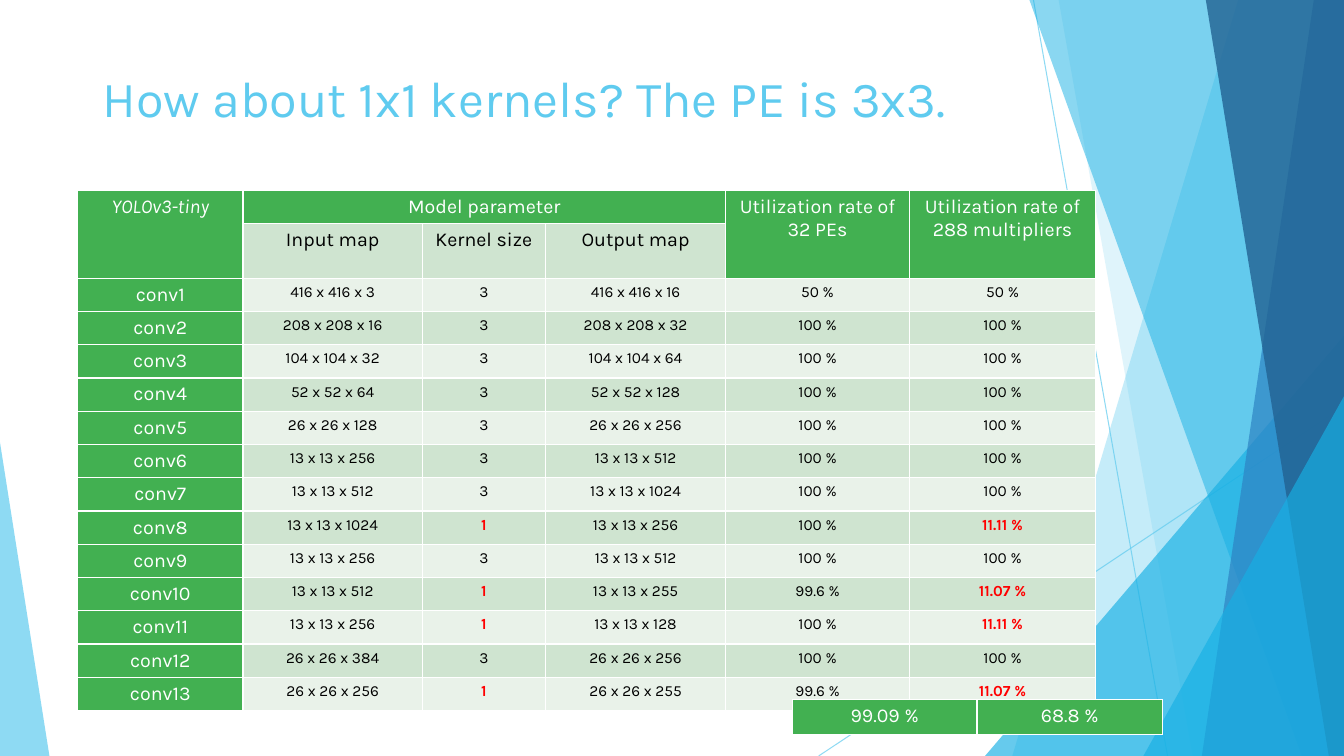
from dataclasses import dataclass

from lxml import etree
from pptx import Presentation
from pptx.dml.color import RGBColor
from pptx.enum.shapes import MSO_CONNECTOR, MSO_SHAPE
from pptx.enum.text import MSO_ANCHOR, PP_ALIGN
from pptx.oxml.ns import qn
from pptx.util import Inches, Pt

STRAIGHT = MSO_CONNECTOR.STRAIGHT
TRIANGLE = MSO_SHAPE.ISOSCELES_TRIANGLE
TOP = MSO_ANCHOR.TOP
LEFT = PP_ALIGN.LEFT
CENTER = PP_ALIGN.CENTER


@dataclass(frozen=True)
class Theme:
    font: str = "Karla"
    sky: str = "5FCBEF"
    cyan: str = "17B0E4"
    blue: str = "2E83C3"
    navy: str = "226292"
    green: str = "42B051"
    band_dark: str = "CFE4D0"
    band_light: str = "E9F2E9"
    white: str = "FFFFFF"
    black: str = "000000"
    red: str = "FF0000"
    title_size: int = 36
    label_size: int = 14
    value_size: int = 11


THEME = Theme()
SLIDE_WIDTH = 13.33
SLIDE_HEIGHT = 7.5

RAYS = [
    ((10.25, 0), (11.58, SLIDE_HEIGHT)),
    ((SLIDE_WIDTH, 4.03), (8.12, SLIDE_HEIGHT)),
]
BANDS = [
    (12.28, 10.04, THEME.sky, 36),
    (10.5, 11.83, THEME.sky, 20),
    (10.21, 12.91, THEME.cyan, 50),
    (13.03, 11.92, THEME.blue, 70),
    (11.96, 13.18, THEME.navy, 80),
]
LARGE_TRIANGLE = (9.77, 3.33, 3.56, 4.17)
SMALL_TRIANGLE = (11.34, 3.93, 1.99, 3.57)
LEFT_TRIANGLE = (0, 4.39, 0.49, 3.11)

COLUMN_WIDTHS = [1.64, 1.78, 1.22, 1.79, 1.82, 1.85]
HEADER_HEIGHTS = [0.33, 0.54]
LAYER_HEIGHT = 0.33
CELL_BOTTOM_MARGIN = 0.02
HEADERS = [
    (0, 0, 1, 0, "YOLOv3-tiny"),
    (0, 1, 0, 3, "Model parameter"),
    (0, 4, 1, 4, "Utilization rate of 32 PEs"),
    (0, 5, 1, 5, "Utilization rate of 288 multipliers"),
]
SUBHEADERS = ["Input map", "Kernel size", "Output map"]
LAYERS = [
    ("416 x 416 x 3", "3", "416 x 416 x 16", "50 %", "50 %"),
    ("208 x 208 x 16", "3", "208 x 208 x 32", "100 %", "100 %"),
    ("104 x 104 x 32", "3", "104 x 104 x 64", "100 %", "100 %"),
    ("52 x 52 x 64", "3", "52 x 52 x 128", "100 %", "100 %"),
    ("26 x 26 x 128", "3", "26 x 26 x 256", "100 %", "100 %"),
    ("13 x 13 x 256", "3", "13 x 13 x 512", "100 %", "100 %"),
    ("13 x 13 x 512", "3", "13 x 13 x 1024", "100 %", "100 %"),
    ("13 x 13 x 1024", "1", "13 x 13 x 256", "100 %", "11.11 %"),
    ("13 x 13 x 256", "3", "13 x 13 x 512", "100 %", "100 %"),
    ("13 x 13 x 512", "1", "13 x 13 x 255", "99.6 %", "11.07 %"),
    ("13 x 13 x 256", "1", "13 x 13 x 128", "100 %", "11.11 %"),
    ("26 x 26 x 384", "3", "26 x 26 x 256", "100 %", "100 %"),
    ("26 x 26 x 256", "1", "26 x 26 x 255", "99.6 %", "11.07 %"),
]
KERNEL_COLUMN = 2
MULTIPLIER_COLUMN = 5
AVERAGES = ["99.09 %", "68.8 %"]


def rgb(color):
    return RGBColor.from_string(color)


def set_opacity(shape, percent):
    for color in shape.element.spPr.iter(qn("a:srgbClr")):
        etree.SubElement(color, qn("a:alpha"), val=str(percent * 1000))


def paint(shape, color, opacity):
    shape.shadow.inherit = False
    shape.fill.solid()
    shape.fill.fore_color.rgb = rgb(color)
    shape.line.fill.background()
    set_opacity(shape, opacity)


def add_ray(slide, start, end):
    ray = slide.shapes.add_connector(STRAIGHT, *map(Inches, start + end))
    ray.line.color.rgb = rgb(THEME.sky)
    ray.line.width = Pt(0.75)
    set_opacity(ray, 70)
    etree.SubElement(ray.element.spPr, qn("a:effectLst"))


def add_band(slide, top_x, bottom_x, color, opacity):
    corners = [
        (SLIDE_WIDTH, 0),
        (SLIDE_WIDTH, SLIDE_HEIGHT),
        (bottom_x, SLIDE_HEIGHT),
    ]
    builder = slide.shapes.build_freeform(Inches(top_x), Inches(0))
    builder.add_line_segments([(Inches(x), Inches(y)) for x, y in corners])
    paint(builder.convert_to_shape(), color, opacity)


def add_triangle(slide, box, apex, color, opacity):
    triangle = slide.shapes.add_shape(TRIANGLE, *map(Inches, box))
    triangle.adjustments[0] = apex
    paint(triangle, color, opacity)


def add_run(frame, text, size, color, align=CENTER, bold=False, italic=False):
    paragraph = frame.paragraphs[0]
    paragraph.alignment = align
    run = paragraph.add_run()
    run.text = text
    run.font.name = THEME.font
    run.font.size = Pt(size)
    run.font.bold = bold
    run.font.italic = italic
    run.font.color.rgb = rgb(color)


def add_title(slide, text):
    box = slide.shapes.add_textbox(Inches(0.92), Inches(0.62), Inches(9.4), Inches(1.23))
    box.text_frame.word_wrap = True
    box.text_frame.vertical_anchor = TOP
    add_run(box.text_frame, text, THEME.title_size, THEME.sky, LEFT)


def add_borders(cell):
    properties = cell._tc.get_or_add_tcPr()
    for side in "LRTB":
        line = etree.SubElement(properties, qn(f"a:ln{side}"), w=str(Pt(1)))
        fill = etree.SubElement(line, qn("a:solidFill"))
        etree.SubElement(fill, qn("a:srgbClr"), val=THEME.white)


def fill_cell(cell, text, fill, color, size=THEME.label_size, **style):
    add_borders(cell)
    cell.margin_bottom = Inches(CELL_BOTTOM_MARGIN)
    cell.fill.solid()
    cell.fill.fore_color.rgb = rgb(fill)
    add_run(cell.text_frame, text, size, color, **style)


def add_grid(slide, left, top, widths, heights):
    table = slide.shapes.add_table(
        len(heights), len(widths), Inches(left), Inches(top),
        Inches(sum(widths)), Inches(sum(heights)),
    ).table
    table.first_row = False
    table.horz_banding = False
    for column, width in zip(table.columns, widths):
        column.width = Inches(width)
    for row, height in zip(table.rows, heights):
        row.height = Inches(height)
    return table


def add_layer_table(slide):
    heights = HEADER_HEIGHTS + [LAYER_HEIGHT] * len(LAYERS)
    table = add_grid(slide, 0.77, 1.89, COLUMN_WIDTHS, heights)
    for row, column, last_row, last_column, text in HEADERS:
        cell = table.cell(row, column)
        cell.merge(table.cell(last_row, last_column))
        fill_cell(cell, text, THEME.green, THEME.white, italic=column == 0)
    for column, text in enumerate(SUBHEADERS, 1):
        fill_cell(table.cell(1, column), text, THEME.band_dark, THEME.black)
    for number, values in enumerate(LAYERS, 1):
        row = number + 1
        band = THEME.band_light if number % 2 else THEME.band_dark
        fill_cell(table.cell(row, 0), f"conv{number}", THEME.green, THEME.white)
        for column, text in enumerate(values, 1):
            marked = values[1] == "1" and column in (KERNEL_COLUMN, MULTIPLIER_COLUMN)
            color = THEME.red if marked else THEME.black
            fill_cell(table.cell(row, column), text, band, color, THEME.value_size, bold=marked)


def add_average_table(slide):
    table = add_grid(slide, 7.86, 6.94, [1.83, 1.84], [0.35])
    for column, text in enumerate(AVERAGES):
        fill_cell(table.cell(0, column), text, THEME.green, THEME.white)


def add_backdrop(slide):
    for start, end in RAYS:
        add_ray(slide, start, end)
    for band in BANDS[:2]:
        add_band(slide, *band)
    add_triangle(slide, LARGE_TRIANGLE, 1, THEME.cyan, 66)
    for band in BANDS[2:]:
        add_band(slide, *band)
    add_triangle(slide, SMALL_TRIANGLE, 1, THEME.cyan, 66)
    add_triangle(slide, LEFT_TRIANGLE, 0, THEME.sky, 70)


def main():
    presentation = Presentation()
    presentation.slide_width = Inches(SLIDE_WIDTH)
    presentation.slide_height = Inches(SLIDE_HEIGHT)
    slide = presentation.slides.add_slide(presentation.slide_layouts[6])
    add_backdrop(slide)
    add_title(slide, "How about 1x1 kernels? The PE is 3x3.")
    add_layer_table(slide)
    add_average_table(slide)
    presentation.save("out.pptx")


if __name__ == "__main__":
    main()
